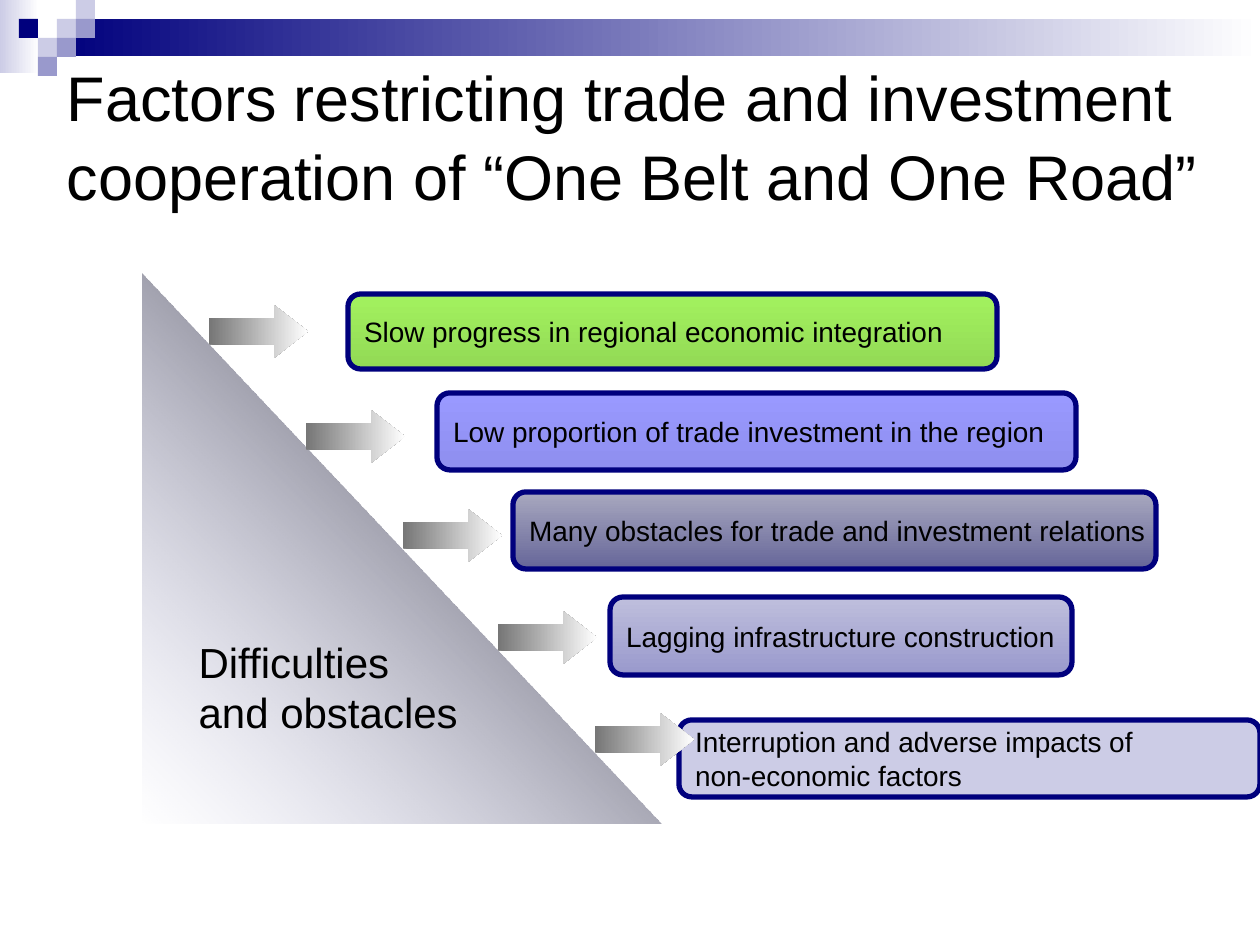
from dataclasses import dataclass

from lxml import etree
from pptx import Presentation
from pptx.dml.color import RGBColor
from pptx.enum.shapes import MSO_SHAPE
from pptx.enum.text import MSO_ANCHOR, MSO_AUTO_SIZE, PP_ALIGN
from pptx.oxml.ns import qn
from pptx.util import Emu, Pt

RECT = MSO_SHAPE.RECTANGLE
ROUNDED = MSO_SHAPE.ROUNDED_RECTANGLE
TRIANGLE = MSO_SHAPE.RIGHT_TRIANGLE
ARROW = MSO_SHAPE.RIGHT_ARROW
MIDDLE = MSO_ANCHOR.MIDDLE
LEFT = PP_ALIGN.LEFT
NO_AUTOFIT = MSO_AUTO_SIZE.NONE

PX_PER_INCH = 126
TITLE_ONLY = 5


@dataclass(frozen=True)
class Theme:
    font: str = "Arial"
    title_size: int = 36
    heading_size: int = 24
    label_size: int = 16
    outline_width: int = 3
    text: str = "000000"
    navy: str = "00007D"
    lavender: str = "CCCCE6"
    periwinkle: str = "9999CC"
    white: str = "FFFFFF"
    black: str = "000000"
    arrow_gray: str = "767676"
    green: tuple = ("A3F25F", "92D955")
    violet: tuple = ("9999FF", "8F8FEF")
    slate: tuple = ("A8A8BF", "666699")
    lilac: tuple = ("BFBFDD", "9999CC")


THEME = Theme()

# Label lines, fill, label box, top left corner of its arrow
FACTORS = [
    (["Slow progress in regional economic integration"],
     THEME.green, (348, 294, 649, 75), (209, 305)),
    (["Low proportion of trade investment in the region"],
     THEME.violet, (437, 393, 639, 77), (306, 410)),
    (["Many obstacles for trade and investment relations"],
     THEME.slate, (513, 492, 643, 77), (403, 509)),
    (["Lagging infrastructure construction"],
     THEME.lilac, (610, 597, 462, 78), (498, 611)),
    (["Interruption and adverse impacts of", "non-economic factors"],
     THEME.lavender, (679, 720, 581, 77), (595, 713)),
]


def px(length):
    return Emu(round(length * 914400 / PX_PER_INCH))


def set_fill(shape, fill, angle=0):
    """Fill with one colour, or with a (start, end) gradient."""
    if isinstance(fill, str):
        shape.fill.solid()
        shape.fill.fore_color.rgb = RGBColor.from_string(fill)
        return
    shape.fill.gradient()
    shape.fill.gradient_angle = angle
    for stop, color, position in zip(shape.fill.gradient_stops, fill, (0, 1)):
        stop.color.rgb = RGBColor.from_string(color)
        stop.position = position


def add_shape(page, kind, box, fill, angle=0, outline=None):
    shape = page.shapes.add_shape(kind, *map(px, box))
    shape.shadow.inherit = False
    set_fill(shape, fill, angle)
    if outline:
        shape.line.color.rgb = RGBColor.from_string(outline)
        shape.line.width = Pt(THEME.outline_width)
    else:
        shape.line.fill.background()
    return shape


def write_text(shape, lines, size, wrap=False, line_spacing=None):
    frame = shape.text_frame
    frame.auto_size = NO_AUTOFIT
    frame.word_wrap = wrap
    frame.vertical_anchor = MIDDLE
    frame.text = "\n".join(lines)
    for para in frame.paragraphs:
        para.alignment = LEFT
        para.line_spacing = line_spacing
        for span in para.runs:
            span.font.name = THEME.font
            span.font.size = Pt(size)
            span.font.color.rgb = RGBColor.from_string(THEME.text)


def draw_header(page, box):
    """Gradient band with a mosaic of small tiles at its left end."""
    left, top, width, _ = box
    tile = 19
    add_shape(page, RECT, (left, top, 39, 73), (THEME.lavender, THEME.white))
    add_shape(page, RECT, (left + 57, top + tile, width - 57, 37),
              (THEME.navy, THEME.white))
    tiles = [
        (3, 1, THEME.lavender), (4, 0, THEME.lavender),
        (4, 1, THEME.periwinkle), (2, 2, THEME.lavender),
        (1, 1, THEME.navy), (3, 2, THEME.periwinkle),
        (2, 3, THEME.periwinkle),
    ]
    for column, row, color in tiles:
        add_shape(page, RECT,
                  (left + column * tile, top + row * tile, tile, tile), color)


def place_title(page, box, text):
    title = page.shapes.title
    title.left, title.top, title.width, title.height = map(px, box)
    write_text(title, [text], THEME.title_size, wrap=True, line_spacing=1.05)


def draw_triangle(page, box, lines):
    """Right triangle that fades out towards its lower left corner."""
    triangle = add_shape(page, TRIANGLE, box,
                         (THEME.periwinkle, THEME.black), angle=45)
    first_color = next(triangle._element.spPr.iter(qn("a:srgbClr")))
    etree.SubElement(first_color, qn("a:alpha"), val="0")
    write_text(triangle, lines, THEME.heading_size)


def draw_factors(page, box):
    """Labels stepping down the slope, with an arrow leading to each."""
    left, top = box[:2]
    for lines, fill, (x, y, width, height), _ in FACTORS:
        label = add_shape(page, ROUNDED, (left + x, top + y, width, height),
                          fill, angle=270, outline=THEME.navy)
        write_text(label, lines, THEME.label_size)
    for *_, (x, y) in FACTORS:
        arrow = add_shape(page, ARROW, (left + x, top + y, 99, 53),
                          (THEME.arrow_gray, THEME.white))
        arrow.adjustments[1] = 0.64


def main():
    deck = Presentation()
    deck.slide_width, deck.slide_height = px(1260), px(945)
    page = deck.slides.add_slide(deck.slide_layouts[TITLE_ONLY])
    draw_header(page, (0, 0, 1260, 76))
    place_title(page, (54, 86, 1169, 96),
                "Factors restricting trade and investment "
                "cooperation of “One Belt and One Road”")
    draw_triangle(page, (143, 274, 519, 550),
                  ["Difficulties", "and obstacles"])
    draw_factors(page, (0, 0, 1260, 945))
    deck.save("out.pptx")


if __name__ == "__main__":
    main()
